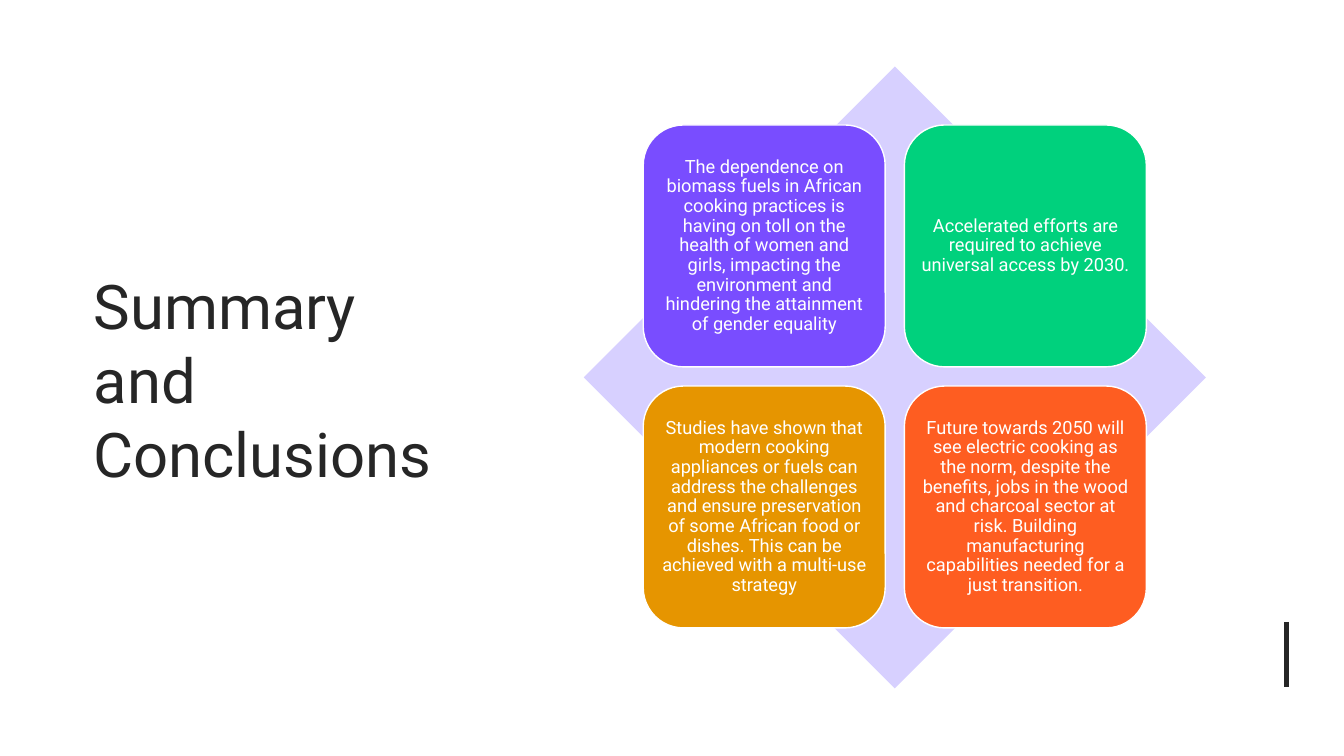
from dataclasses import dataclass

import pptx
import pptx.dml.color
import pptx.enum.shapes
import pptx.enum.text
import pptx.oxml
import pptx.util
from pptx.util import Inches

SHAPE = pptx.enum.shapes.MSO_SHAPE
ALIGN = pptx.enum.text.PP_ALIGN
FONT = "Roboto"
COLORS = {
    "white": "FFFFFF",
    "ink": "262626",
    "lavender": "D7D0FF",
    "purple": "794DFF",
    "green": "00D17D",
    "amber": "E69500",
    "orange": "FE5D21",
}
CARD_LEFT, CARD_TOP = 6.38, 1.24
CARD_SIZE, CARD_STEP = 2.4, 2.59


@dataclass
class Card:
    row: int
    col: int
    color: str
    text: str


CARDS = [
    Card(0, 0, "purple",
         "The dependence on biomass fuels in African cooking practices is "
         "having on toll on the health of women and girls, impacting the "
         "environment and hindering the attainment of gender equality"),
    Card(0, 1, "green",
         "Accelerated efforts are required to achieve universal access by 2030."),
    Card(1, 0, "amber",
         "Studies have shown that modern cooking appliances or fuels can "
         "address the challenges and ensure preservation of some African food "
         "or dishes. This can be achieved with a multi-use strategy"),
    Card(1, 1, "orange",
         "Future towards 2050 will see electric cooking as the norm, despite "
         "the benefits, jobs in the wood and charcoal sector at risk. Building "
         "manufacturing capabilities needed for a just transition."),
]


def rgb(name: str) -> pptx.dml.color.RGBColor:
    return pptx.dml.color.RGBColor.from_string(COLORS[name])


def write(s, text: str, size: float, color: str, align, spacing: float) -> None:
    """Set one wrapped, vertically centred paragraph in a shape."""
    tf = s.text_frame
    tf.text = text
    tf.word_wrap = True
    tf.vertical_anchor = pptx.enum.text.MSO_ANCHOR.MIDDLE
    p = tf.paragraphs[0]
    p.alignment = align
    p.line_spacing = spacing
    r = p.runs[0]
    r.font.name = FONT
    r.font.size = pptx.util.Pt(size)
    r.font.color.rgb = rgb(color)


def add_title(slide) -> None:
    s = slide.shapes.add_textbox(
        Inches(0.83), Inches(0.94), Inches(3.77), Inches(5.64))
    write(s, "Summary and Conclusions", 44, "ink", ALIGN.LEFT, 1.0)


def add_accent_line(slide) -> None:
    s = slide.shapes.add_connector(
        pptx.enum.shapes.MSO_CONNECTOR.STRAIGHT,
        Inches(12.76), Inches(6.17), Inches(12.76), Inches(6.82))
    s.line.color.rgb = rgb("ink")
    s.line.width = pptx.util.Pt(3)
    s._element.spPr.append(pptx.oxml.parse_xml(
        '<a:effectLst xmlns:a='
        '"http://schemas.openxmlformats.org/drawingml/2006/main"/>'))


def add_square(slide, kind, left: float, top: float, size: float, color: str):
    s = slide.shapes.add_shape(
        kind, Inches(left), Inches(top), Inches(size), Inches(size))
    s.shadow.inherit = False
    s.fill.solid()
    s.fill.fore_color.rgb = rgb(color)
    s.line.fill.background()
    return s


def add_card(slide, card: Card) -> None:
    s = add_square(slide, SHAPE.ROUNDED_RECTANGLE,
                   CARD_LEFT + card.col * CARD_STEP,
                   CARD_TOP + card.row * CARD_STEP, CARD_SIZE, card.color)
    s.line.color.rgb = rgb("white")
    s.line.width = pptx.util.Pt(1)
    tf = s.text_frame
    tf.margin_left = tf.margin_right = Inches(0.05)
    tf.margin_top = tf.margin_bottom = Inches(0.05)
    write(s, card.text, 13, "white", ALIGN.CENTER, 0.9)


def main() -> None:
    prs = pptx.Presentation()
    prs.slide_width, prs.slide_height = Inches(13.33), Inches(7.5)
    slide = prs.slides.add_slide(prs.slide_layouts[6])
    add_title(slide)
    add_accent_line(slide)
    add_square(slide, SHAPE.DIAMOND, 5.79, 0.66, 6.17, "lavender")
    for card in CARDS:
        add_card(slide, card)
    prs.save("out.pptx")


if __name__ == "__main__":
    main()
